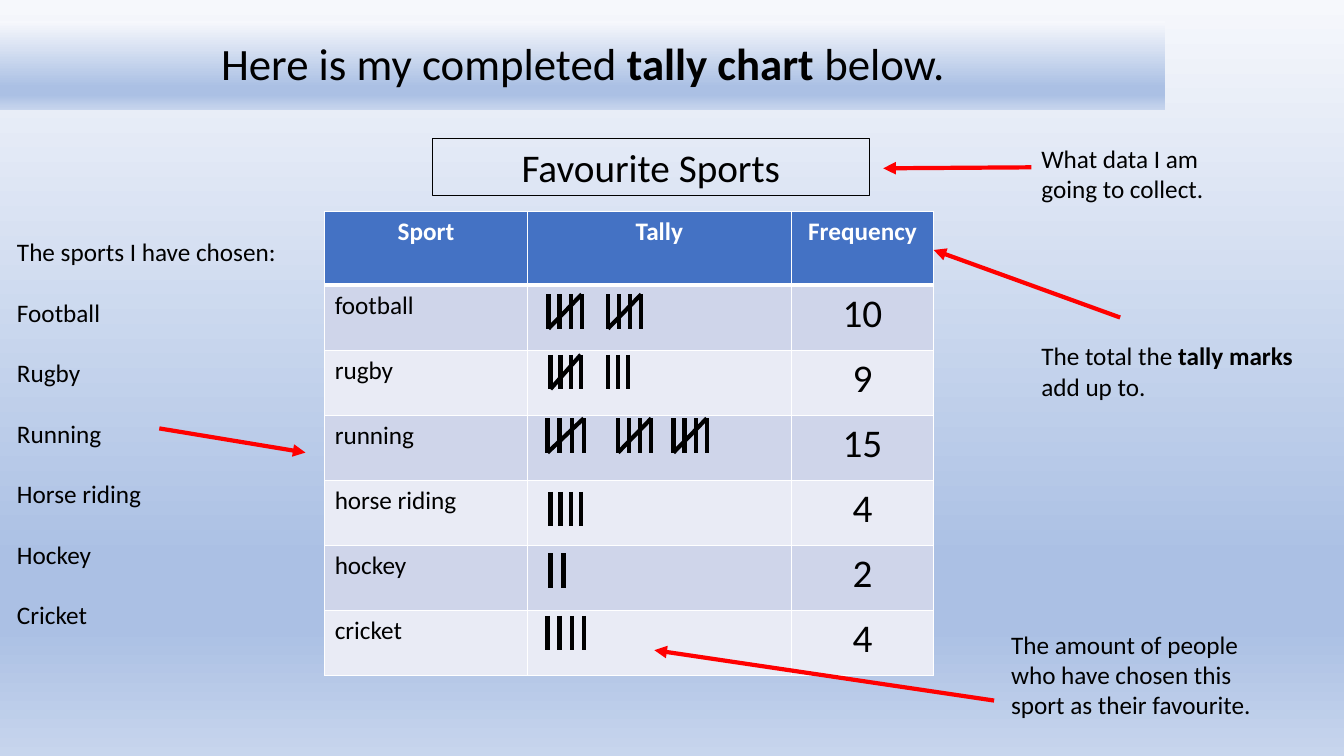
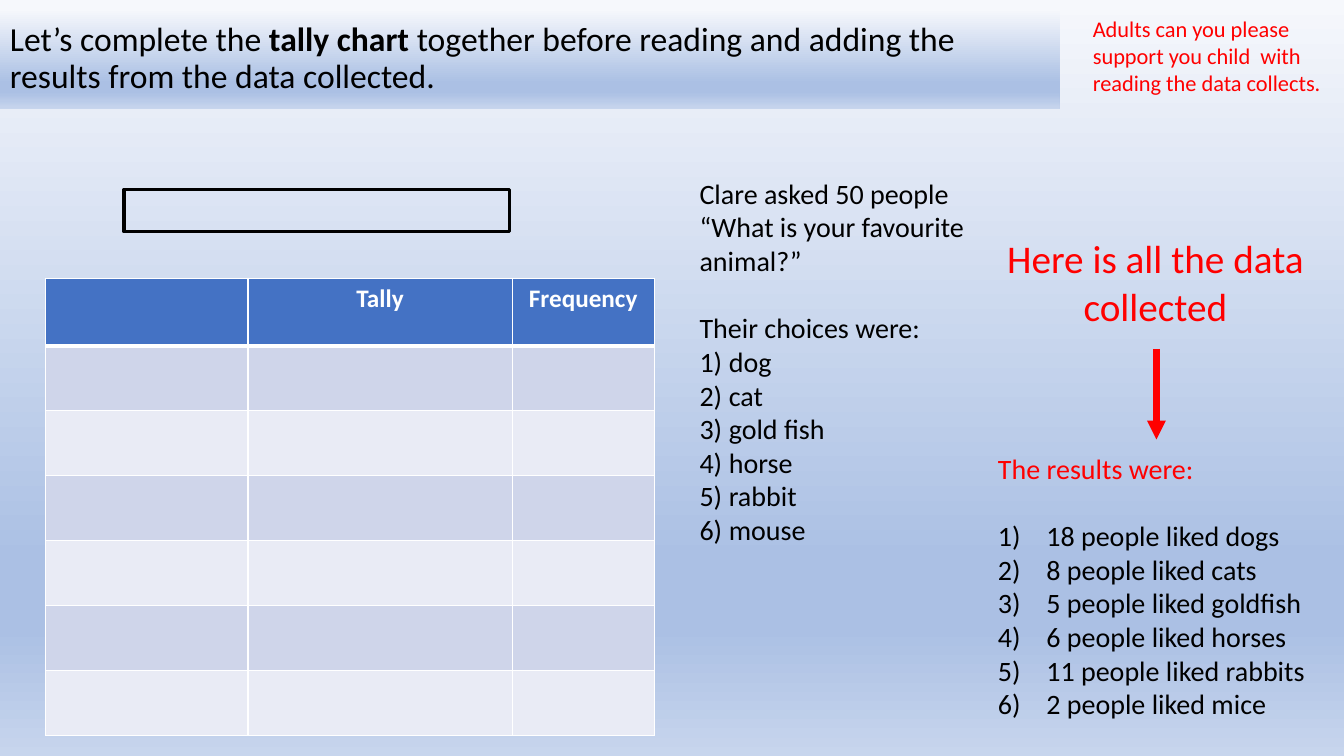
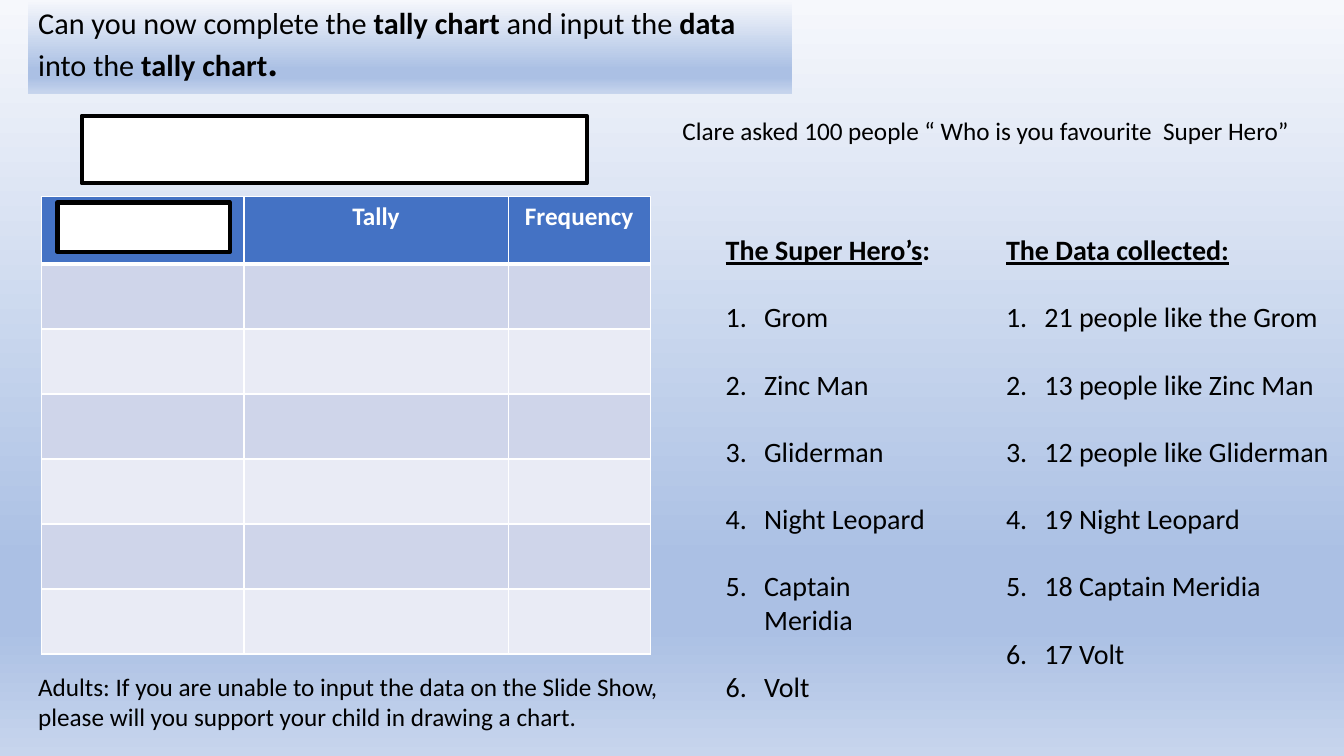
"""Build three lesson slides about tally charts."""
from dataclasses import dataclass

from lxml import etree
from pptx import Presentation
from pptx.dml.color import RGBColor
from pptx.enum import shapes, text
from pptx.oxml import ns
from pptx.util import Inches, Pt

COLOURS = {"ink": "000000", "red": "FF0000", "white": "FFFFFF", "header": "4472C4",
           "odd": "CFD5EA", "even": "E9EBF5"}
GRADIENT = [(0, "F6F8FC"), (74, "ABC0E4"), (83, "ABC0E4"), (100, "C7D5ED")]
FONT = "Calibri"
LINE_HEIGHT = 1.2
LEFT, CENTRE = text.PP_ALIGN.LEFT, text.PP_ALIGN.CENTER

COLUMNS = [2.01, 2.62, 1.41]
BODY_ROWS = 6
ROW_HEIGHT = 3.87 / BODY_ROWS
MARK_HEIGHT = 0.34
HEADINGS = ["Tally", "Frequency"]
SPORTS = [
    ("football", 10, 2.92, [(5.44, 5, 0.11), (6.03, 5, 0.11)]),
    ("rugby", 9, 3.52, [(5.46, 5, 0.1), (6.03, 3, 0.1)]),
    ("running", 15, 4.15, [(5.43, 5, 0.12), (6.13, 5, 0.11), (6.68, 5, 0.11)]),
    ("horse riding", 4, 4.88, [(5.46, 4, 0.1)]),
    ("hockey", 2, 5.49, [(5.46, 2, 0.13)]),
    ("cricket", 4, 6.11, [(5.43, 4, 0.12)]),
]
SPORT_NOTES = [
    ((10.23, 1.37, 2.11, 0.71), ["What data I am going to collect."]),
    ((10.23, 3.33, 2.86, 1.01), ["The total the ", ("tally marks", "b"), " add up to."]),
    ((9.93, 6.19, 2.86, 1.31),
     ["The amount of people who have chosen this sport as their favourite."]),
]
SPORT_ARROWS = [((10.23, 1.66), (8.76, 1.67)), ((1.58, 4.25), (3.03, 4.49)),
                ((11.11, 3.15), (9.26, 2.48)), ((9.86, 6.95), (6.49, 6.45))]
ANIMALS = ["dog", "cat", "gold fish", "horse", "rabbit", "mouse"]
ANIMAL_RESULTS = ["18 people liked dogs", "8 people liked cats", "5 people liked goldfish",
                  "6 people liked horses", "11 people liked rabbits", "2 people liked mice"]
HEROES = ["Grom", "Zinc Man", "Gliderman", "Night Leopard", "Captain Meridia", "Volt"]
HERO_RESULTS = ["21 people like the Grom", "13 people like Zinc Man",
                "12 people like Gliderman", "19 Night Leopard", "18 Captain Meridia",
                "17 Volt"]


@dataclass
class Para:
    spans: list
    gap: bool = False
    number: str = ""
    indent: float = 0
    colour: str = ""


def numbered(items, number, indent, gap=False):
    return [Para([item], gap, number, indent) for item in items]


def rgb(name):
    return RGBColor.from_string(COLOURS[name])


def add_xml(parent, tag, **attributes):
    return etree.SubElement(parent, ns.qn(tag), attributes)


def fill_gradient(fill, owner):
    fill.gradient()
    gradient = next(owner.iter(ns.qn("a:gradFill")))
    for child in list(gradient):
        gradient.remove(child)
    stops = add_xml(gradient, "a:gsLst")
    for percent, colour in GRADIENT:
        stop = add_xml(stops, "a:gs", pos=str(percent * 1000))
        add_xml(stop, "a:srgbClr", val=colour)
    add_xml(gradient, "a:lin", ang="5400000", scaled="0")


def write(frame, paras, size=18, colour="ink", align=LEFT, spacing=None):
    frame.word_wrap = True
    for index, item in enumerate(paras):
        para = frame.paragraphs[0] if index == 0 else frame.add_paragraph()
        para.alignment = align
        if spacing:
            para.line_spacing = spacing
        if item.gap:
            para.space_before = Pt(size * LINE_HEIGHT)
        if item.number:
            props = para._p.get_or_add_pPr()
            props.set("marL", str(Inches(item.indent)))
            props.set("indent", str(-Inches(item.indent)))
            add_xml(props, "a:buFont", typeface="+mj-lt")
            add_xml(props, "a:buAutoNum", type=item.number)
        for part in item.spans:
            words, style, points = ((part, "", size) if isinstance(part, str)
                                    else (*part, size)[:3])
            span = para.add_run()
            span.text = words
            span.font.name = FONT
            span.font.size = Pt(points)
            span.font.bold = "b" in style
            span.font.underline = "u" in style
            span.font.color.rgb = rgb(item.colour or colour)


def add_text(page, at, paras, **style):
    box = page.shapes.add_textbox(*map(Inches, at))
    write(box.text_frame, paras, **style)


def add_box(page, at, line=None, fill=None):
    box = page.shapes.add_shape(shapes.MSO_SHAPE.RECTANGLE, *map(Inches, at))
    box.shadow.inherit = False
    if fill:
        box.fill.solid()
        box.fill.fore_color.rgb = rgb(fill)
    else:
        box.fill.background()
    if line:
        box.line.color.rgb = rgb("ink")
        box.line.width = Pt(line)
    else:
        box.line.fill.background()
    return box


def add_title(page, at, spans, size, align=LEFT):
    band = add_box(page, at)
    fill_gradient(band.fill, band._element.spPr)
    band.text_frame.vertical_anchor = text.MSO_ANCHOR.MIDDLE
    write(band.text_frame, [Para(spans)], size, align=align, spacing=0.9)


def add_line(page, start, end, colour="ink", width=3, arrow=False):
    line = page.shapes.add_connector(shapes.MSO_CONNECTOR.STRAIGHT,
                                     *map(Inches, (*start, *end)))
    line.line.color.rgb = rgb(colour)
    line.line.width = Pt(width)
    if arrow:
        add_xml(line.line._get_or_add_ln(), "a:tailEnd", type="triangle")
    add_xml(line._element.spPr, "a:effectLst")


def add_tally(page, left, top, count, pitch):
    bars = min(count, 4)
    for bar in range(bars):
        x = left + bar * pitch
        add_line(page, (x, top), (x, top + MARK_HEIGHT))
    if count == 5:
        add_line(page, (left + (bars - 1) * pitch, top), (left, top + MARK_HEIGHT))


def style_cell(cell, row):
    props = cell._tc.get_or_add_tcPr()
    thick = {0: "a:lnB", 1: "a:lnT"}.get(row)
    for side in ("a:lnL", "a:lnR", "a:lnT", "a:lnB"):
        border = add_xml(props, side, w=str(Pt(3 if side == thick else 1)))
        add_xml(add_xml(border, "a:solidFill"), "a:srgbClr", val=COLOURS["white"])
    cell.fill.solid()
    cell.fill.fore_color.rgb = rgb("header" if row == 0 else "odd" if row % 2 else "even")


def add_tally_table(page, left, top, header_height, first_heading="", rows=()):
    rows = rows or [("", "", "")] * BODY_ROWS
    content = [(first_heading, *HEADINGS), *rows]
    heights = [header_height] + [ROW_HEIGHT] * len(rows)
    size = sum(COLUMNS), sum(heights)
    table = page.shapes.add_table(len(content), len(COLUMNS),
                                  *map(Inches, (left, top, *size))).table
    for column, width in zip(table.columns, COLUMNS):
        column.width = Inches(width)
    for row, (height, values) in enumerate(zip(heights, content)):
        table.rows[row].height = Inches(height)
        for column, value in enumerate(values):
            cell = table.cell(row, column)
            style_cell(cell, row)
            if value and row == 0:
                write(cell.text_frame, [Para([(value, "b")])], colour="white", align=CENTRE)
            elif value:
                last = column == 2
                write(cell.text_frame, [Para([value])], 28 if last else 18,
                      align=CENTRE if last else LEFT)


def build_sports(page):
    add_tally_table(page, 3.22, 2.1, 0.73, "Sport",
                    [(name, "", str(total)) for name, total, _, _ in SPORTS])
    for _, _, top, groups in SPORTS:
        for left, count, pitch in groups:
            add_tally(page, left, top, count, pitch)
    add_title(page, (0, 0.21, 11.56, 0.88),
              ["Here is my completed ", ("tally chart ", "b"), "below."], 32, CENTRE)
    caption = add_box(page, (4.29, 1.37, 4.33, 0.57), 0.75)
    write(caption.text_frame, [Para(["Favourite Sports"])], 28, align=CENTRE)
    chosen = [Para([name.capitalize()], gap=True) for name, *_ in SPORTS]
    add_text(page, (0.07, 2.3, 2.78, 4.64), [Para(["The sports I have chosen:"]), *chosen])
    for at, spans in SPORT_NOTES:
        add_text(page, at, [Para(spans)])
    for start, end in SPORT_ARROWS:
        add_line(page, start, end, "red", arrow=True)


def build_animals(page):
    add_title(page, (0, 0.09, 10.51, 0.99),
              ["Let’s complete the ", ("tally chart ", "b"),
               "together before reading and adding the results from the data collected."], 24)
    add_tally_table(page, 0.45, 2.76, 0.67)
    add_box(page, (1.23, 1.88, 3.82, 0.42), 2.25)
    add_text(page, (6.84, 1.7, 3, 5.32),
             [Para(["Clare asked 50 people"]), Para(["“What is your favourite animal?”"]),
              Para(["Their choices were:"], gap=True),
              *numbered(ANIMALS, "arabicParenR", 0.29)], size=20)
    results = numbered(ANIMAL_RESULTS, "arabicParenR", 0.48)
    results[0].gap = True
    add_text(page, (9.8, 4.43, 3.33, 2.79),
             [Para(["The results were:"], colour="red"), *results], size=20)
    add_text(page, (9.51, 2.28, 3.9, 1.04), [Para(["Here is all the data collected"])],
             size=28, colour="red", align=CENTRE)
    add_line(page, (11.47, 3.46), (11.47, 4.36), "red", 4.5, arrow=True)
    add_text(page, (10.74, 0.1, 2.59, 0.91),
             [Para(["Adults can you please support you child  with reading the data collects."])],
             size=16, colour="red")


def build_heroes(page):
    add_title(page, (0.28, 0, 7.58, 0.93),
              ["Can you now complete the ", ("tally chart", "b"), " and input the ",
               ("data", "b"), " into the ", ("tally chart", "b"), (".", "b", 28.8)], 21.6)
    add_tally_table(page, 0.41, 1.95, 0.67)
    add_text(page, (0.28, 6.61, 6.6, 0.71),
             [Para(["Adults: If you are unable to input the data on the Slide Show, "
                    "please will you support your child in drawing a chart."])])
    add_text(page, (6.67, 1.09, 6.4, 0.4),
             [Para(["Clare asked 100 people “ Who is you favourite  Super Hero”"])])
    lists = [((7.1, 2.26, 2.3, 5), [("The Super Hero’s", "bu"), (":", "b")], HEROES),
             ((9.88, 2.26, 3.46, 5), [("The Data collected:", "bu")], HERO_RESULTS)]
    for at, heading, items in lists:
        add_text(page, at, [Para(heading), *numbered(items, "arabicPeriod", 0.38, gap=True)],
                 size=20)
    for at in [(0.57, 2.01, 1.71, 0.49), (0.81, 1.15, 5.01, 0.67)]:
        add_box(page, at, 3, "white")


def main():
    deck = Presentation()
    deck.slide_width, deck.slide_height = Inches(13.33), Inches(7.5)
    master = deck.slide_master
    fill_gradient(master.background.fill, master._element.cSld)
    for build in (build_sports, build_animals, build_heroes):
        build(deck.slides.add_slide(deck.slide_layouts[6]))
    deck.save("out.pptx")


if __name__ == "__main__":
    main()
